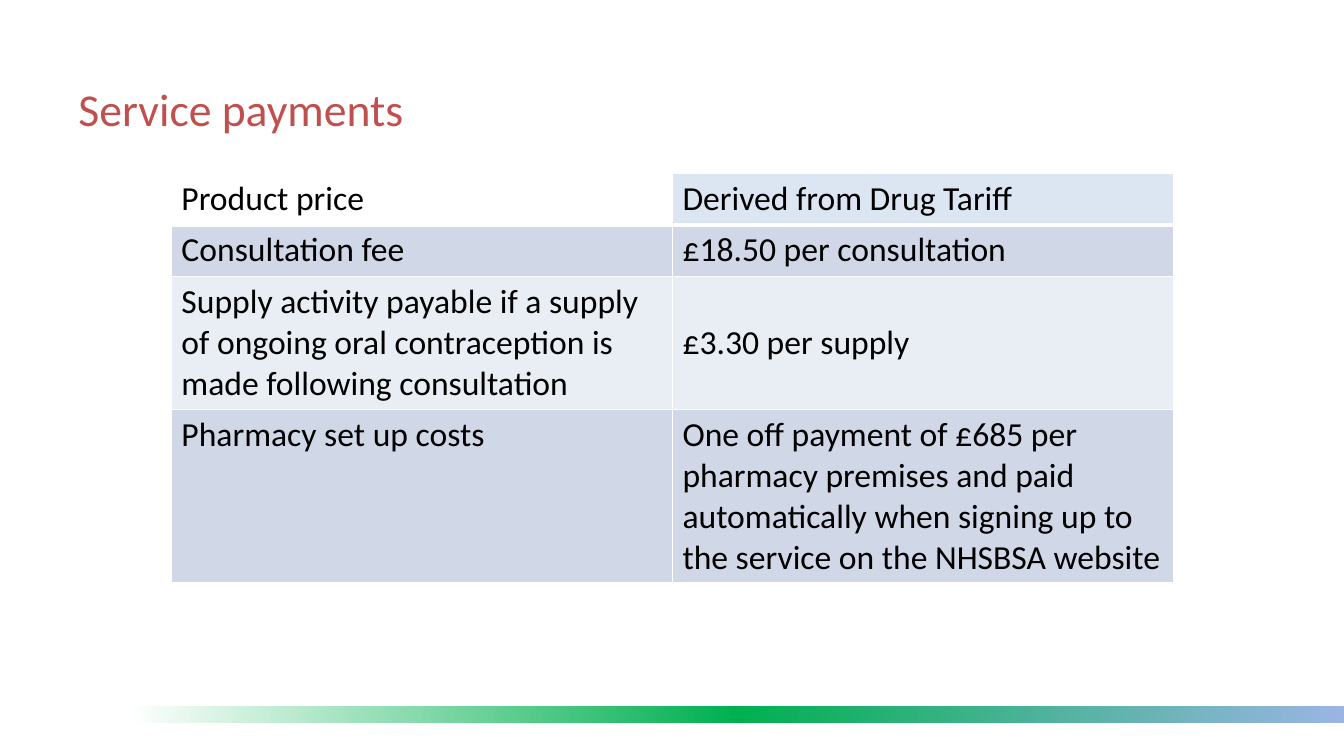
from copy import deepcopy

from pptx import Presentation
from pptx.dml.color import RGBColor
from pptx.enum.shapes import MSO_SHAPE
from pptx.enum.text import MSO_ANCHOR
from pptx.oxml import parse_xml
from pptx.oxml.ns import nsdecls, qn
from pptx.util import Inches, Pt

WHITE = RGBColor(0xFF, 0xFF, 0xFF)
BLACK = RGBColor(0x00, 0x00, 0x00)
RED = RGBColor(0xC0, 0x50, 0x4D)
GREEN = RGBColor(0x00, 0xB0, 0x50)
SKY = RGBColor(0x9A, 0xB5, 0xE4)
HEADER = RGBColor(0xDC, 0xE6, 0xF2)
BANDS = [RGBColor(0xE9, 0xED, 0xF4), RGBColor(0xD0, 0xD8, 0xE8)]

TITLE_FONT = {"name": "Calibri", "size": Pt(32.6)}
CELL_FONT = {"name": "Calibri", "size": Pt(24)}

PAYMENTS = [
    ("Product price", "Derived from Drug Tariff"),
    ("Consultation fee", "£18.50 per consultation"),
    ("Supply activity payable if a supply of ongoing oral contraception "
     "is made following consultation", "£3.30 per supply"),
    ("Pharmacy set up costs",
     "One off payment of £685 per pharmacy premises and paid automatically "
     "when signing up to the service on the NHSBSA website"),
]
ROW_HEIGHTS = [0.51, 0.51, 1.32, 1.72]


def write(tf, text, color, font):
    r = tf.paragraphs[0].add_run()
    r.text = text
    r.font.color.rgb = color
    for name, value in font.items():
        setattr(r.font, name, value)


def set_borders(cell, bottom):
    tcPr = cell._tc.get_or_add_tcPr()
    for side, width in {"L": 1, "R": 1, "T": 1, "B": bottom}.items():
        tcPr.append(parse_xml(
            f'<a:ln{side} {nsdecls("a")} w="{Pt(width)}"><a:solidFill>'
            f'<a:srgbClr val="{WHITE}"/></a:solidFill></a:ln{side}>'))


def add_footer_band(slide, box):
    s = slide.shapes.add_shape(MSO_SHAPE.RECTANGLE, *map(Inches, box))
    s.shadow.inherit = False
    s.line.fill.background()
    s.fill.gradient()
    s.fill.gradient_angle = 0
    # The default gradient has two stops; a third goes in the middle
    stops = s._element.spPr.find(qn("a:gradFill")).find(qn("a:gsLst"))
    stops.insert(1, deepcopy(stops[0]))
    for stop, position, color in zip(s.fill.gradient_stops, (0, 0.5, 1),
                                     (WHITE, GREEN, SKY)):
        stop.position = position
        stop.color.rgb = color


def add_title(slide, box):
    tf = slide.shapes.add_textbox(*map(Inches, box)).text_frame
    tf.word_wrap = True
    tf.vertical_anchor = MSO_ANCHOR.MIDDLE
    write(tf, "Service payments", RED, TITLE_FONT)


def add_payment_table(slide, box):
    table = slide.shapes.add_table(len(PAYMENTS), 2, *map(Inches, box)).table
    table.first_row = table.horz_banding = False
    for i, (height, texts) in enumerate(zip(ROW_HEIGHTS, PAYMENTS)):
        table.rows[i].height = Inches(height)
        fills = [BANDS[i % 2]] * 2 if i else [WHITE, HEADER]
        for j, (text, fill) in enumerate(zip(texts, fills)):
            cell = table.cell(i, j)
            set_borders(cell, 1 if i else 3)
            cell.fill.solid()
            cell.fill.fore_color.rgb = fill
            write(cell.text_frame, text, BLACK, CELL_FONT)
    table.cell(2, 1).vertical_anchor = MSO_ANCHOR.MIDDLE


def main():
    prs = Presentation()
    prs.slide_width, prs.slide_height = Inches(13.33), Inches(7.5)
    slide = prs.slides.add_slide(prs.slide_layouts[6])
    add_footer_band(slide, (1.26, 7, 12.07, 0.17))
    add_title(slide, (0.68, 0.29, 10.79, 1.56))
    add_payment_table(slide, (1.7, 1.72, 9.94, sum(ROW_HEIGHTS)))
    prs.save("out.pptx")


if __name__ == "__main__":
    main()
